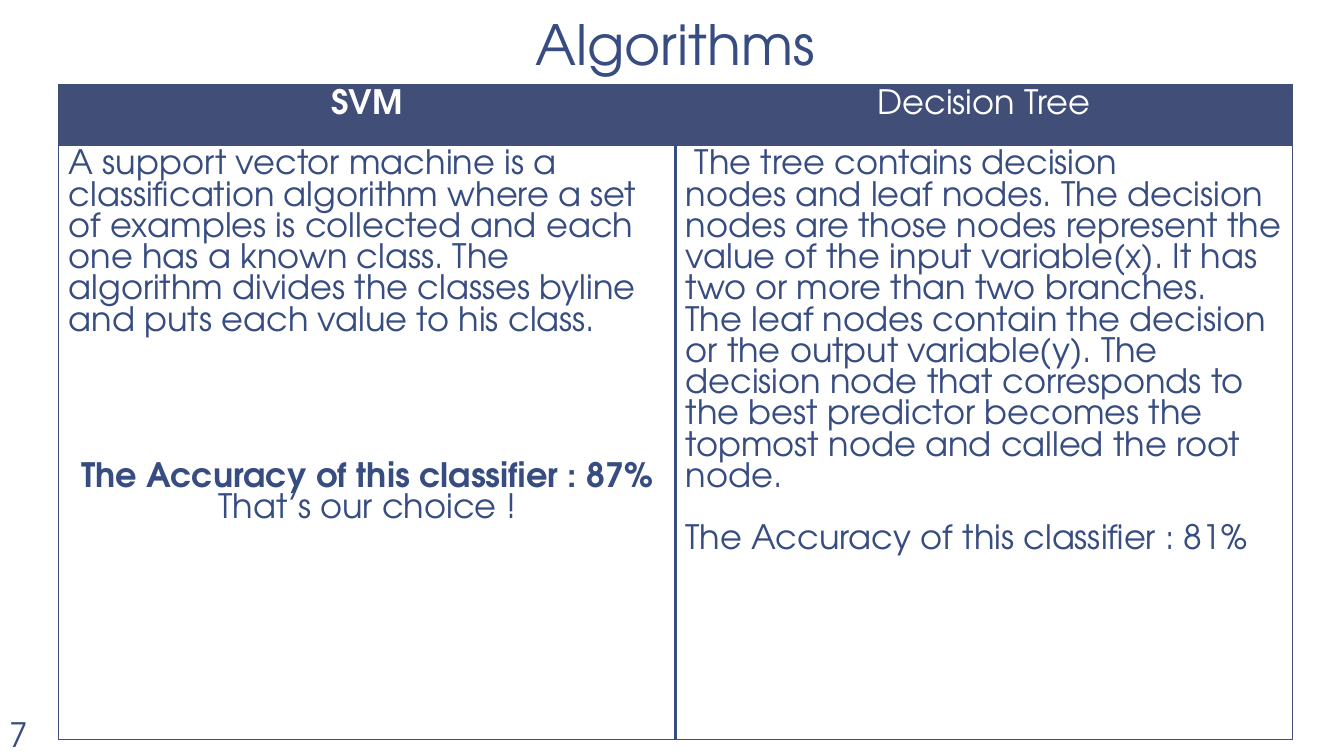
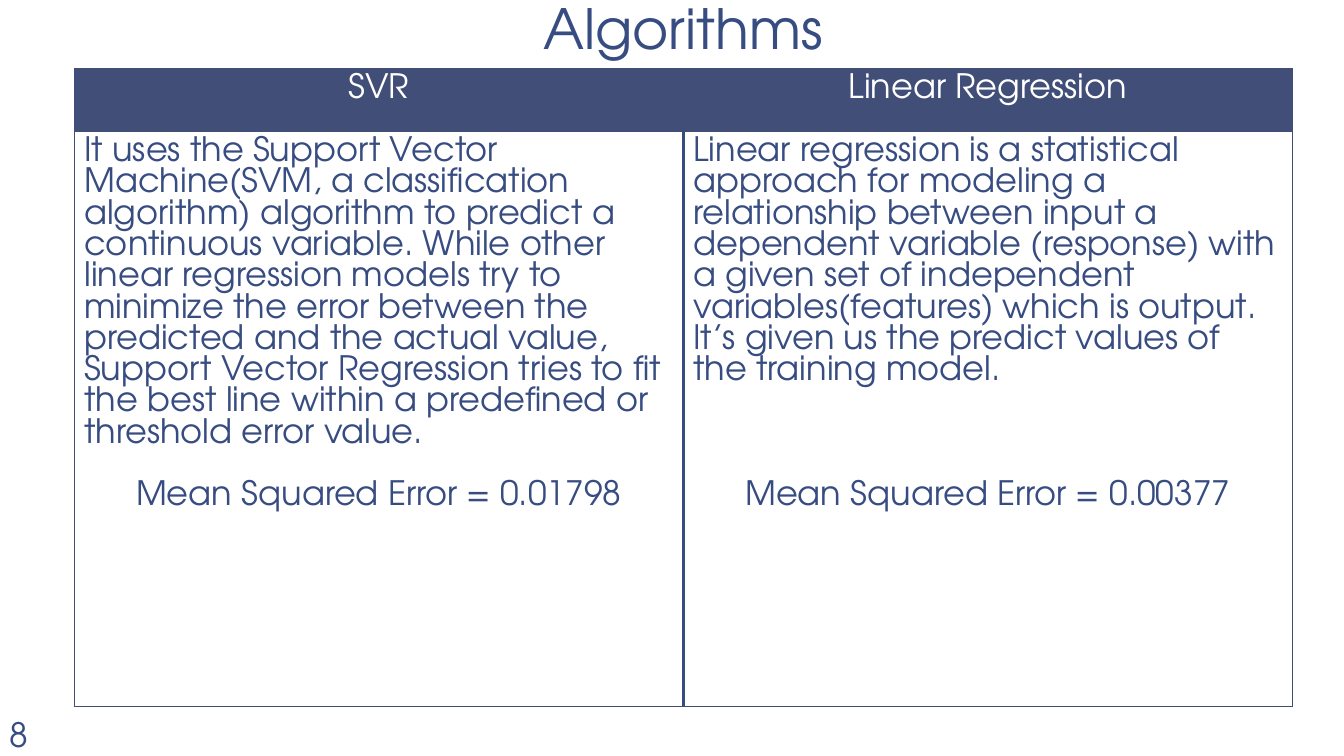
from dataclasses import dataclass
from typing import Any

from lxml.etree import SubElement
from pptx import Presentation
from pptx.dml.color import RGBColor
from pptx.enum.text import MSO_ANCHOR, PP_ALIGN
from pptx.oxml.ns import qn
from pptx.util import Cm, Pt


@dataclass(frozen=True)
class Theme:
    font: str = "TeX Gyre Adventor"
    ink: str = "374C81"
    band: str = "414E77"
    paper: str = "FFFFFF"
    title_size: float = 39.6
    text_size: float = 24
    title_spacing: float = 0.85
    line_pitch: float = 22.3
    thin: float = 0.5
    thick: float = 2.25


@dataclass(frozen=True)
class Line:
    text: str
    centred: bool = False
    bold: bool = False
    gap_lines: int = 0


@dataclass(frozen=True)
class Column:
    heading: Line
    body: tuple[Line, ...]


@dataclass(frozen=True)
class Comparison:
    title_left: float
    left: float
    top: float
    row_heights: tuple[float, float]
    columns: tuple[Column, Column]


THEME = Theme()
TABLE_RIGHT = 32.57
TITLE_WIDTH, TITLE_HEIGHT = 28.22, 1.8
FIRST_PAGE_NUMBER = 7
PLAIN_TABLE_STYLE = "{2D5ABB26-0587-4C30-8999-92F81FD0307C}"
HARD_SPACE = chr(160)

COMPARISONS = (
    Comparison(2.9, 1.48, 2.12, (1.53, 14.99), (
        Column(Line("SVM", centred=True, bold=True), (
            Line("A support vector machine is a classification algorithm where a set of "
                 "examples is collected and each one has a known class. The algorithm "
                 "divides the classes byline and puts each value to his class."),
            Line("The Accuracy of this classifier : 87%", centred=True, bold=True, gap_lines=4),
            Line("That’s our choice !", centred=True),
        )),
        Column(Line("Decision Tree", centred=True), (
            Line(f"{HARD_SPACE}The tree contains{HARD_SPACE}decision "
                 f"nodes{HARD_SPACE}and{HARD_SPACE}leaf nodes. "
                 f"The{HARD_SPACE}decision nodes{HARD_SPACE}are those nodes represent the "
                 "value of the input variable(x). It has two or more than two branches. "
                 f"The{HARD_SPACE}leaf nodes{HARD_SPACE}contain the decision or the output "
                 "variable(y). The decision node that corresponds to the best predictor "
                 f"becomes the topmost node and called the{HARD_SPACE}root node."),
            Line("The Accuracy of this classifier : 81%", gap_lines=1),
        )),
    )),
    Comparison(3.1, 1.87, 1.72, (1.6, 14.49), (
        Column(Line("SVR", centred=True), (
            Line("It uses the Support Vector Machine(SVM, a classification algorithm) "
                 "algorithm to predict a continuous variable. While other linear regression "
                 "models try to minimize the error between the predicted and the actual "
                 "value, Support Vector Regression tries to fit the best line within a "
                 "predefined or threshold error value."),
            Line("Mean Squared Error = 0.01798", centred=True, gap_lines=1),
        )),
        Column(Line("Linear Regression", centred=True), (
            Line("Linear regression is a statistical approach for modeling a relationship "
                 "between input a dependent variable (response) with a given set of "
                 "independent variables(features) which is output. It’s given us the "
                 "predict values of the training model."),
            Line("Mean Squared Error = 0.00377", centred=True, gap_lines=3),
        )),
    )),
)


def apply_format(target: Any, values: dict[str, Any]) -> None:
    for name, value in values.items():
        setattr(target, name, value)


def write_lines(frame: Any, lines: tuple[Line, ...], colour: str,
                size: float = THEME.text_size, spacing: float = 1.0) -> None:
    for index, line in enumerate(lines):
        para = frame.add_paragraph() if index else frame.paragraphs[0]
        apply_format(para, {
            "alignment": PP_ALIGN.CENTER if line.centred else PP_ALIGN.LEFT,
            "line_spacing": spacing,
        })
        if line.gap_lines:
            para.space_before = Pt(line.gap_lines * THEME.line_pitch)
        span = para.add_run()
        span.text = line.text
        apply_format(span.font, {"name": THEME.font, "size": Pt(size), "bold": line.bold})
        span.font.color.rgb = RGBColor.from_string(colour)


def add_title(page: Any, left: float, bottom: float) -> None:
    box = page.shapes.add_textbox(Cm(left), Cm(bottom - TITLE_HEIGHT),
                                  Cm(TITLE_WIDTH), Cm(TITLE_HEIGHT))
    apply_format(box.text_frame, {
        "word_wrap": True, "vertical_anchor": MSO_ANCHOR.BOTTOM,
        "margin_left": Cm(0.33), "margin_right": Cm(0.33),
        "margin_top": Cm(0.18), "margin_bottom": Cm(0.18),
    })
    write_lines(box.text_frame, (Line("Algorithms", centred=True),), THEME.ink,
                THEME.title_size, THEME.title_spacing)


def add_page_number(page: Any, number: int) -> None:
    box = page.shapes.add_textbox(Cm(0), Cm(17.86), Cm(1.27), Cm(1.27))
    box.text_frame.word_wrap = True
    write_lines(box.text_frame, (Line(str(number)),), THEME.ink)


def set_borders(cell: Any, inner_side: str, sides: str) -> None:
    """Draw the named sides (letters of LRTB); the inner side is the thick divider."""
    properties = cell._tc.get_or_add_tcPr()
    for side in sides:
        inner = side == inner_side
        width = THEME.thick if inner else THEME.thin
        border = SubElement(properties, qn(f"a:ln{side}"), w=str(int(Pt(width))))
        fill = SubElement(border, qn("a:solidFill"))
        SubElement(fill, qn("a:srgbClr"), val=THEME.ink if inner else THEME.band)


def add_comparison_table(page: Any, comparison: Comparison) -> None:
    width = TABLE_RIGHT - comparison.left
    graphic = page.shapes.add_table(2, 2, Cm(comparison.left), Cm(comparison.top),
                                    Cm(width), Cm(sum(comparison.row_heights)))
    table = graphic.table
    apply_format(table, {"first_row": False, "horz_banding": False})
    table._tbl.tblPr.find(qn("a:tableStyleId")).text = PLAIN_TABLE_STYLE
    for row, height in zip(table.rows, comparison.row_heights):
        row.height = Cm(height)
    for index, column in enumerate(comparison.columns):
        table.columns[index].width = Cm(width / 2)
        inner_side, outer_side = ("R", "L") if index == 0 else ("L", "R")
        head, body = table.cell(0, index), table.cell(1, index)
        set_borders(head, inner_side, f"{outer_side}T")
        head.fill.solid()
        head.fill.fore_color.rgb = RGBColor.from_string(THEME.band)
        write_lines(head.text_frame, (column.heading,), THEME.paper)
        set_borders(body, inner_side, "LRTB")
        body.fill.background()
        write_lines(body.text_frame, column.body, THEME.ink)


def main() -> None:
    deck = Presentation()
    apply_format(deck, {"slide_width": Cm(33.87), "slide_height": Cm(19.05)})
    blank = deck.slide_layouts[6]
    for number, comparison in enumerate(COMPARISONS, start=FIRST_PAGE_NUMBER):
        page = deck.slides.add_slide(blank)
        add_title(page, comparison.title_left, comparison.top)
        add_comparison_table(page, comparison)
        add_page_number(page, number)
    deck.save("out.pptx")


if __name__ == "__main__":
    main()
